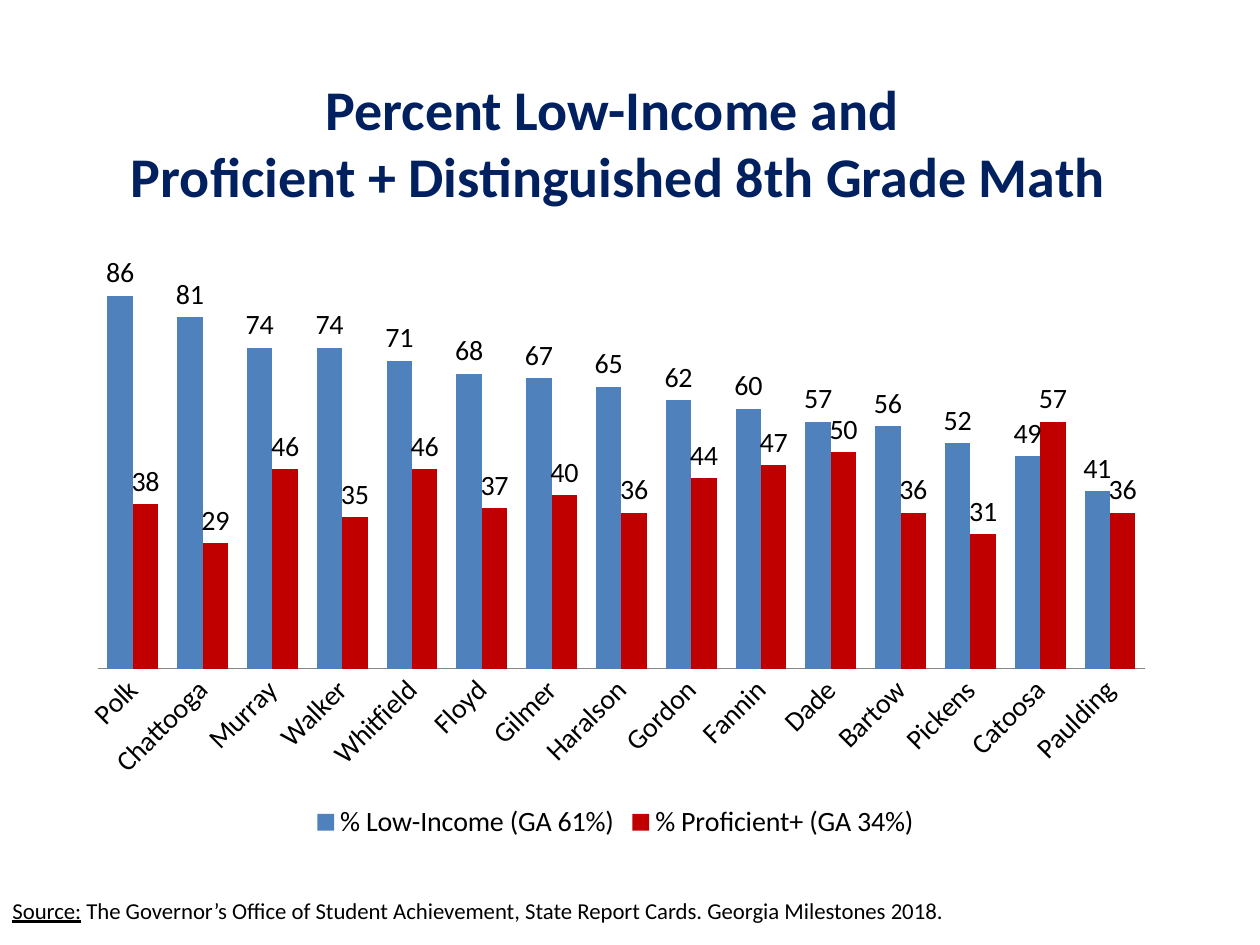
"""Build a slide comparing low-income share and 8th grade math proficiency by county."""
from dataclasses import dataclass

from pptx import Presentation
from pptx.chart.data import CategoryChartData
from pptx.dml.color import RGBColor
from pptx.enum.chart import XL_CHART_TYPE, XL_LABEL_POSITION, XL_LEGEND_POSITION, XL_TICK_MARK
from pptx.enum.text import MSO_ANCHOR, PP_ALIGN
from pptx.oxml import parse_xml
from pptx.oxml.ns import nsdecls
from pptx.util import Emu, Pt

CLUSTERED = XL_CHART_TYPE.COLUMN_CLUSTERED
OUTSIDE_END = XL_LABEL_POSITION.OUTSIDE_END
LEGEND_BOTTOM = XL_LEGEND_POSITION.BOTTOM
NO_TICK = XL_TICK_MARK.NONE
MIDDLE = MSO_ANCHOR.MIDDLE
CENTER = PP_ALIGN.CENTER

EMU_PER_PX = 914400 / 126
TITLE_ONLY = 5
LABEL_ROTATION = "-2700000"

COUNTIES = ["Polk", "Chattooga", "Murray", "Walker", "Whitfield", "Floyd", "Gilmer", "Haralson",
            "Gordon", "Fannin", "Dade", "Bartow", "Pickens", "Catoosa", "Paulding"]
LOW_INCOME = [86, 81, 74, 74, 71, 68, 67, 65, 62, 60, 57, 56, 52, 49, 41]
PROFICIENT = [38, 29, 46, 35, 46, 37, 40, 36, 44, 47, 50, 36, 31, 57, 36]


@dataclass(frozen=True)
class Theme:
    font: str = "Calibri"
    heading: RGBColor = RGBColor(0x00, 0x20, 0x60)
    text: RGBColor = RGBColor(0x00, 0x00, 0x00)
    axis: RGBColor = RGBColor(0x86, 0x86, 0x86)
    low_income: RGBColor = RGBColor(0x4F, 0x81, 0xBD)
    proficient: RGBColor = RGBColor(0xC0, 0x00, 0x00)
    title_size: int = 32
    chart_size: int = 16
    source_size: int = 13


def px(length):
    return Emu(round(length * EMU_PER_PX))


class SlideBuilder:
    def __init__(self, presentation, theme):
        self.theme = theme
        self.slide = presentation.slides.add_slide(presentation.slide_layouts[TITLE_ONLY])

    def style(self, font, size, color, bold=False):
        font.name = self.theme.font
        font.size = Pt(size)
        font.color.rgb = color
        font.bold = bold

    def title(self, text, left, top, width, height):
        heading = self.slide.shapes.title
        heading.left, heading.top = px(left), px(top)
        heading.width, heading.height = px(width), px(height)
        frame = heading.text_frame
        frame.text = text
        frame.vertical_anchor = MIDDLE
        paragraph = frame.paragraphs[0]
        paragraph.alignment = CENTER
        self.style(paragraph.font, self.theme.title_size, self.theme.heading, bold=True)

    def source_note(self, label, citation, left, top, width, height):
        note = self.slide.shapes.add_textbox(px(left), px(top), px(width), px(height))
        note.text_frame.word_wrap = True
        paragraph = note.text_frame.paragraphs[0]
        paragraph.line_spacing = 0.6
        self.style(paragraph.font, self.theme.source_size, self.theme.text)
        source = paragraph.add_run()
        source.text = label
        source.font.underline = True
        paragraph.add_run().text = citation

    def column_chart(self, categories, series, left, top, width, height, plot):
        data = CategoryChartData(number_format="0")
        data.categories = categories
        for name, values, _ in series:
            data.add_series(name, values)
        chart = self.slide.shapes.add_chart(
            CLUSTERED, px(left), px(top), px(width), px(height), data).chart
        self.style(chart.font, self.theme.chart_size, self.theme.text)
        chart.has_title = False
        chart.has_legend = True
        chart.legend.position = LEGEND_BOTTOM
        chart.legend.include_in_layout = False
        self.style(chart.legend.font, self.theme.chart_size, self.theme.text)
        self.axes(chart)
        columns = chart.plots[0]
        columns.gap_width = 75
        columns.overlap = 0
        columns.vary_by_categories = False
        for column_series, (_, _, color) in zip(columns.series, series):
            column_series.format.fill.solid()
            column_series.format.fill.fore_color.rgb = color
            column_series.invert_if_negative = False
            labels = column_series.data_labels
            labels.show_value = True
            labels.number_format = "0"
            labels.number_format_is_linked = False
            labels.position = OUTSIDE_END
            self.style(labels.font, self.theme.chart_size, self.theme.text)
        plot_left, plot_top, plot_width, plot_height = plot
        self.place_plot(chart, (plot_left - left) / width, (plot_top - top) / height,
                        plot_width / width, plot_height / height)

    def axes(self, chart):
        values = chart.value_axis
        values.minimum_scale, values.maximum_scale = 0, 100
        values.has_major_gridlines = False
        values.visible = False
        counties = chart.category_axis
        counties.major_tick_mark = NO_TICK
        counties.format.line.color.rgb = self.theme.axis
        self.style(counties.tick_labels.font, self.theme.chart_size, self.theme.text)
        for body in chart.element.xpath(".//c:catAx/c:txPr/a:bodyPr"):
            body.set("rot", LABEL_ROTATION)

    def place_plot(self, chart, x, y, w, h):
        plot_area = chart.element.xpath(".//c:plotArea")[0]
        for layout in plot_area.xpath("./c:layout"):
            plot_area.remove(layout)
        fractions = "".join(f'<c:{side} val="{share:.4f}"/>'
                            for side, share in (("x", x), ("y", y), ("w", w), ("h", h)))
        plot_area.insert(0, parse_xml(
            f'<c:layout {nsdecls("c")}><c:manualLayout><c:layoutTarget val="inner"/>'
            f'<c:xMode val="edge"/><c:yMode val="edge"/>{fractions}'
            '</c:manualLayout></c:layout>'))


def main():
    presentation = Presentation()
    presentation.slide_width, presentation.slide_height = px(1260), px(945)
    theme = Theme()
    builder = SlideBuilder(presentation, theme)
    builder.title("Percent Low-Income and \vProficient + Distinguished 8th Grade Math",
                  64, 50, 1109, 183)
    builder.source_note(
        "Source:",
        " The Governor’s Office of Student Achievement, State Report Cards. "
        "Georgia Milestones 2018.",
        0, 900, 1103, 32)
    builder.column_chart(
        COUNTIES,
        [("% Low-Income (GA 61%)", LOW_INCOME, theme.low_income),
         ("% Proficient+ (GA 34%)", PROFICIENT, theme.proficient)],
        64, 223, 1103, 622, plot=(98, 235, 1047, 434))
    presentation.save("out.pptx")


if __name__ == "__main__":
    main()
